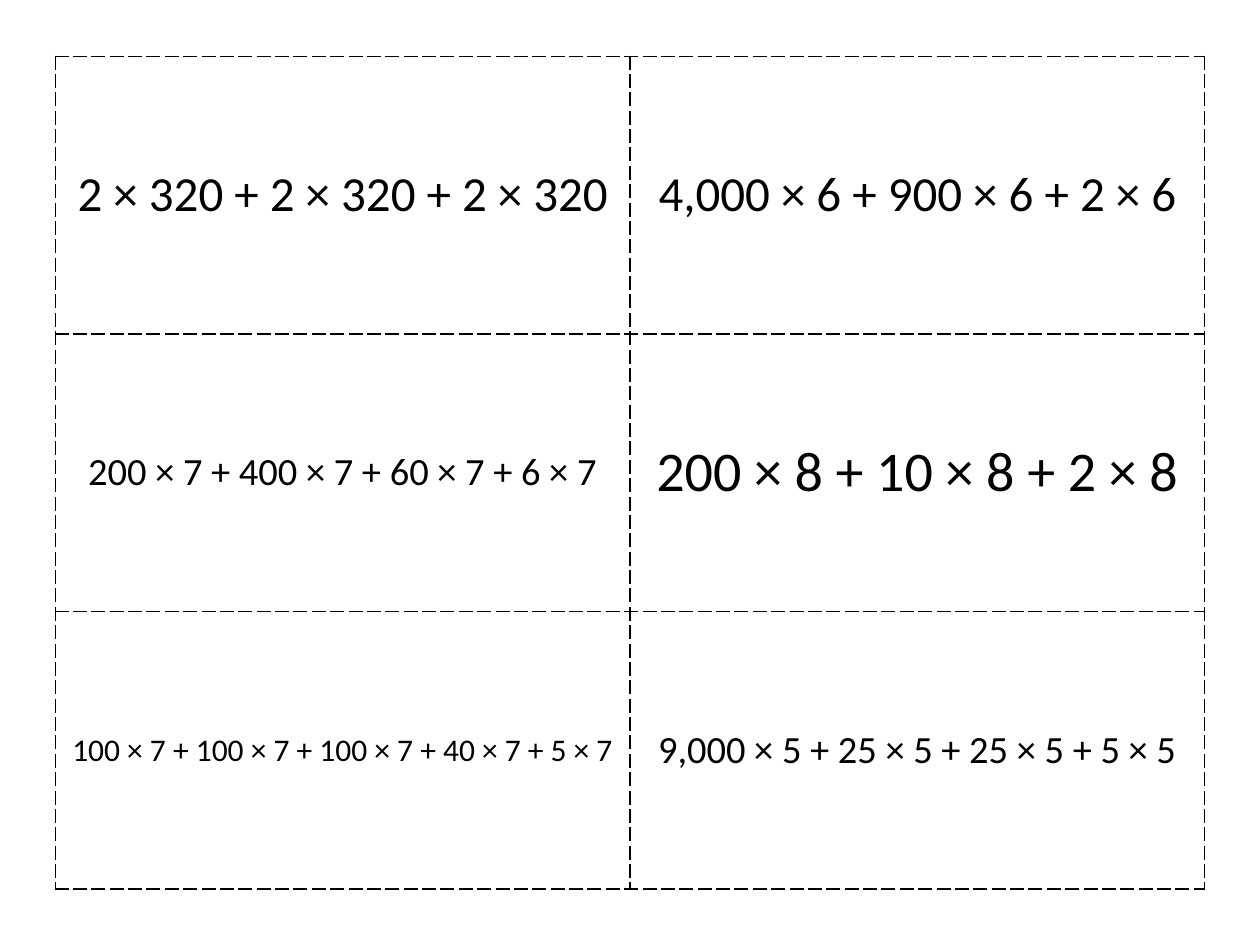
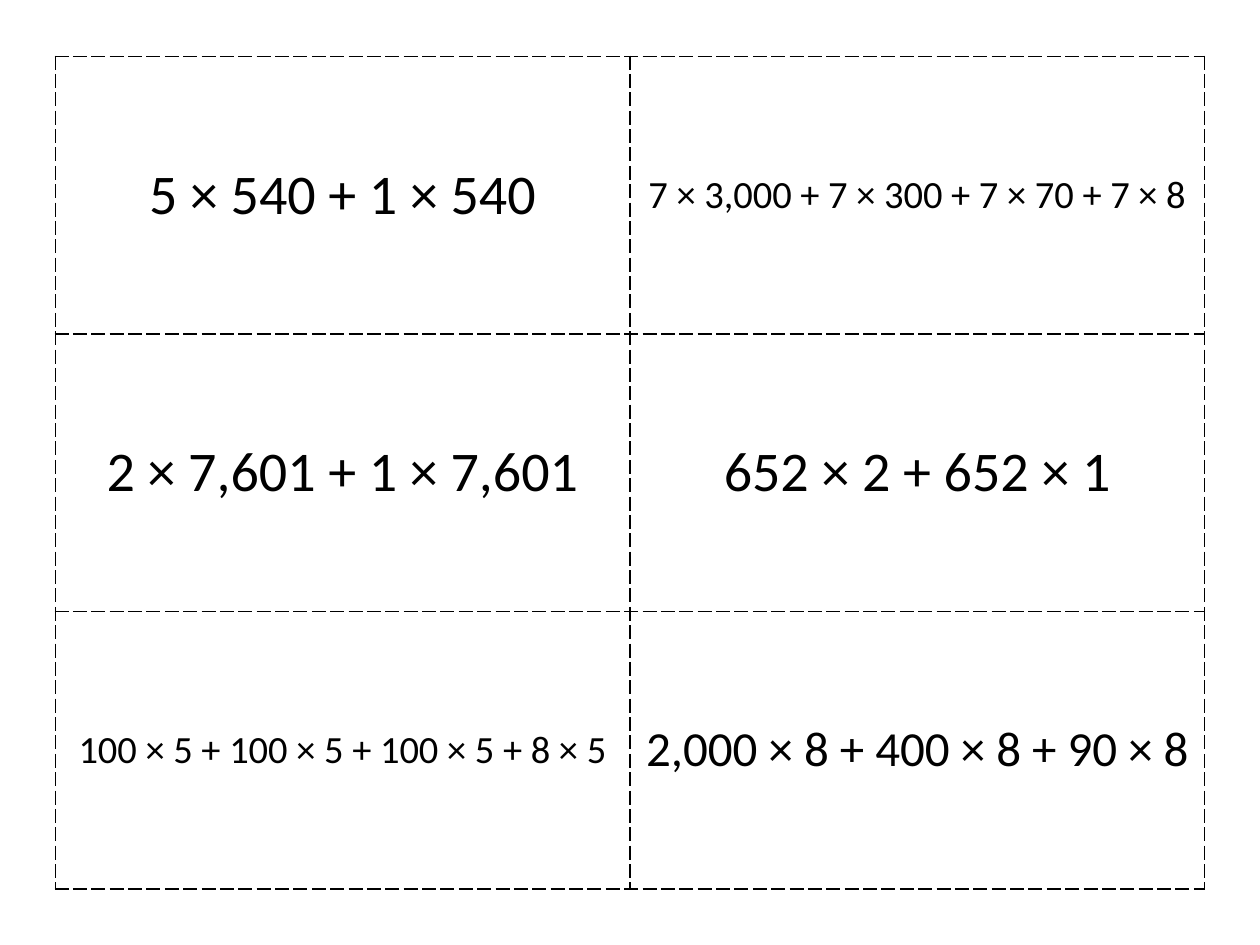
"""Build two sheets of cut-out multiplication cards."""
from lxml import etree
from pptx import Presentation
from pptx.dml.color import RGBColor
from pptx.enum.text import MSO_ANCHOR, PP_ALIGN
from pptx.oxml.ns import qn
from pptx.util import Pt

MIDDLE = MSO_ANCHOR.MIDDLE
CENTER = PP_ALIGN.CENTER
COLORS = {"ink": "000000", "paper": "FFFFFF"}
FONT = "Calibri"
SLIDE_WIDTH, SLIDE_HEIGHT = 720, 540
SHEET_LEFT, SHEET_TOP = 31.6, 32.2
CARD_WIDTH, CARD_HEIGHT = 328.4, 158.6
CUT_LINE_WIDTH = 1
BLANK_LAYOUT = 6

SHEETS = [
    [
        [("2 × 320 + 2 × 320 + 2 × 320", 28), ("4,000 × 6 + 900 × 6 + 2 × 6", 28)],
        [("200 × 7 + 400 × 7 + 60 × 7 + 6 × 7", 22), ("200 × 8 + 10 × 8 + 2 × 8", 32)],
        [("100 × 7 + 100 × 7 + 100 × 7 + 40 × 7 + 5 × 7", 18),
         ("9,000 × 5 + 25 × 5 + 25 × 5 + 5 × 5", 22)],
    ],
    [
        [("5 × 540 + 1 × 540", 32), ("7 × 3,000 + 7 × 300 + 7 × 70 + 7 × 8", 22)],
        [("2 × 7,601 + 1 × 7,601", 32), ("652 × 2 + 652 × 1", 32)],
        [("100 × 5 + 100 × 5 + 100 × 5 + 8 × 5", 22), ("2,000 × 8 + 400 × 8 + 90 × 8", 28)],
    ],
]


class CardDeck:
    """Holds the card style and the current slide."""

    def __init__(self):
        self.deck = Presentation()
        self.deck.slide_width = Pt(SLIDE_WIDTH)
        self.deck.slide_height = Pt(SLIDE_HEIGHT)
        self.slide = None

    def new_slide(self):
        """Start a blank slide with the paper colour."""
        self.slide = self.deck.slides.add_slide(self.deck.slide_layouts[BLANK_LAYOUT])
        paper = self.slide.background.fill
        paper.solid()
        paper.fore_color.rgb = RGBColor.from_string(COLORS["paper"])

    def cut_lines(self, card):
        """Draw dashed lines on the four edges of a card."""
        properties = card._tc.get_or_add_tcPr()
        for edge in ("a:lnL", "a:lnR", "a:lnT", "a:lnB"):
            line = etree.SubElement(properties, qn(edge), w=str(Pt(CUT_LINE_WIDTH)))
            ink = etree.SubElement(line, qn("a:solidFill"))
            etree.SubElement(ink, qn("a:srgbClr"), val=COLORS["ink"])
            etree.SubElement(line, qn("a:prstDash"), val="lgDash")

    def card(self, card, expression, size):
        """Style one card and write its expression."""
        self.cut_lines(card)
        card.fill.background()
        card.vertical_anchor = MIDDLE
        paragraph = card.text_frame.paragraphs[0]
        paragraph.alignment = CENTER
        run = paragraph.add_run()
        run.text = expression
        run.font.name = FONT
        run.font.size = Pt(size)
        run.font.bold = False
        run.font.color.rgb = RGBColor.from_string(COLORS["ink"])

    def sheet(self, rows):
        """Lay out a grid of equal cards as a table."""
        row_count, column_count = len(rows), len(rows[0])
        grid = self.slide.shapes.add_table(
            row_count, column_count, Pt(SHEET_LEFT), Pt(SHEET_TOP),
            Pt(CARD_WIDTH * column_count), Pt(CARD_HEIGHT * row_count)).table
        grid.first_row = False
        grid.horz_banding = False
        for row_index, row in enumerate(rows):
            for column_index, (expression, size) in enumerate(row):
                self.card(grid.cell(row_index, column_index), expression, size)


def main():
    """Build and save the card sheets."""
    cards = CardDeck()
    for rows in SHEETS:
        cards.new_slide()
        cards.sheet(rows)
    cards.deck.save("out.pptx")


if __name__ == "__main__":
    main()
